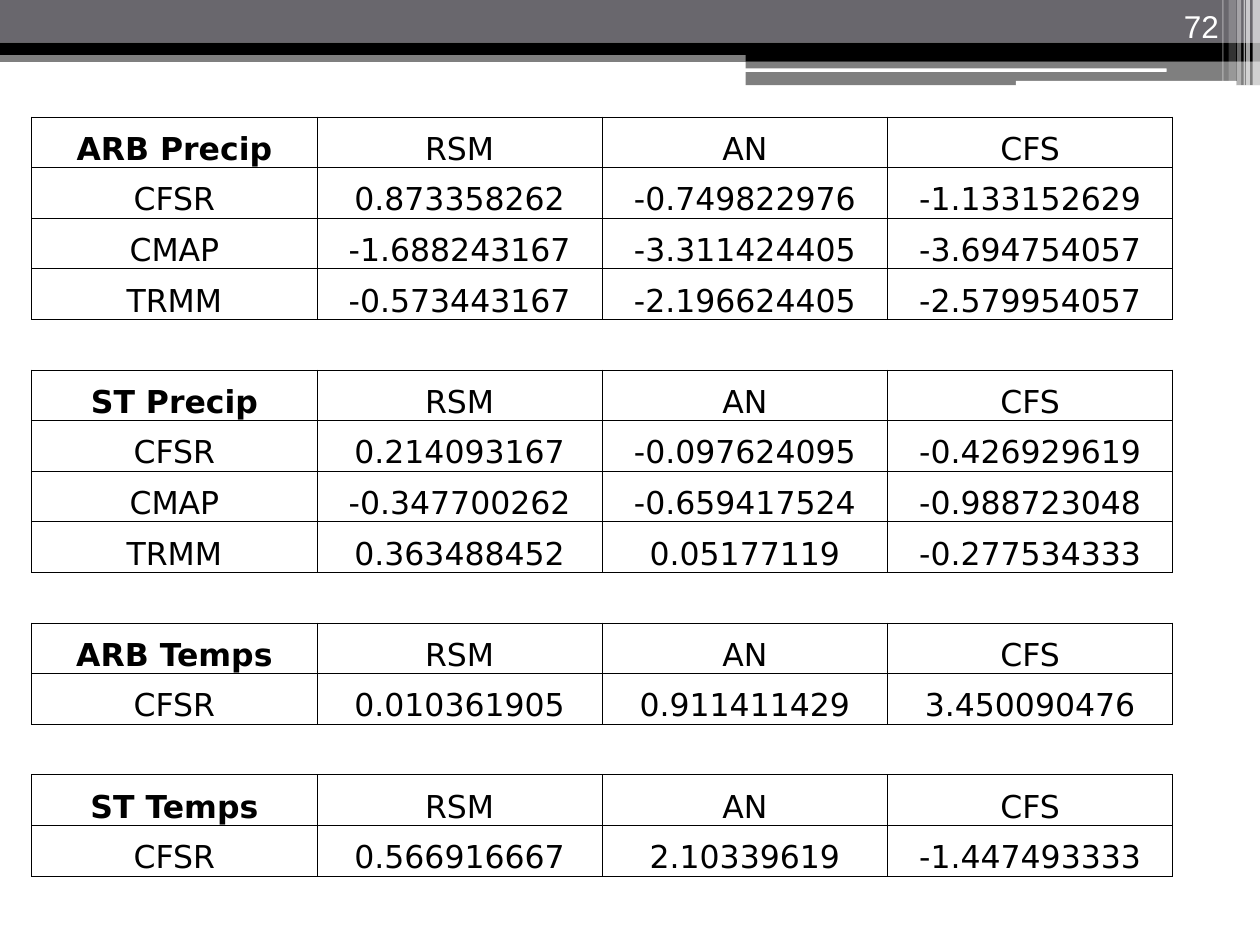
from lxml import etree
from pptx import Presentation
from pptx.dml.color import RGBColor
from pptx.enum import shapes, text
from pptx.oxml import ns
from pptx.util import Cm, Pt

BLACK = RGBColor(0x00, 0x00, 0x00)
WHITE = RGBColor(0xFF, 0xFF, 0xFF)
SLATE = RGBColor(0x69, 0x67, 0x6D)

RECT = shapes.MSO_SHAPE.RECTANGLE
ROUNDED = shapes.MSO_SHAPE.ROUNDED_RECTANGLE

# kind, left, top, width, height (cm), colour, opacity (%)
HEADER_BANDS = [
    (RECT, 0, 1.02, 25.4, 0.23, BLACK, 50),
    (RECT, 0, 0, 25.4, 0.86, SLATE, 100),
    (RECT, 0, 0.86, 25.4, 0.25, BLACK, 100),
    (RECT, 15.03, 0.99, 10.37, 0.25, BLACK, 100),
    (RECT, 15.03, 1.24, 10.37, 0.48, BLACK, 50),
    (ROUNDED, 15.01, 1.38, 8.51, 0.07, WHITE, 100),
    (ROUNDED, 20.48, 1.63, 4.45, 0.1, WHITE, 100),
]
# left, width, height (cm), opacity (%)
EDGE_STRIPES = [
    (25.25, 0.15, 1.73, 65),
    (25.12, 0.08, 1.73, 65),
    (25.07, 0.03, 1.73, 60),
    (24.94, 0.08, 1.73, 40),
    (24.77, 0.15, 1.63, 20),
    (24.64, 0.03, 1.63, 30),
]

MODELS = ["RSM", "AN", "CFS"]
BIAS_BLOCKS = [
    ("ARB Precip", [
        ("CFSR", "0.873358262", "-0.749822976", "-1.133152629"),
        ("CMAP", "-1.688243167", "-3.311424405", "-3.694754057"),
        ("TRMM", "-0.573443167", "-2.196624405", "-2.579954057"),
    ]),
    ("ST Precip", [
        ("CFSR", "0.214093167", "-0.097624095", "-0.426929619"),
        ("CMAP", "-0.347700262", "-0.659417524", "-0.988723048"),
        ("TRMM", "0.363488452", "0.05177119", "-0.277534333"),
    ]),
    ("ARB Temps", [("CFSR", "0.010361905", "0.911411429", "3.450090476")]),
    ("ST Temps", [("CFSR", "0.566916667", "2.10339619", "-1.447493333")]),
]
COLUMN_WIDTH = Cm(5.75)
ROW_HEIGHT = Cm(1.02)


def add_band(page, kind, left, top, width, height, color, opacity):
    band = page.shapes.add_shape(kind, Cm(left), Cm(top), Cm(width), Cm(height))
    band.shadow.inherit = False
    band.line.fill.background()
    band.fill.solid()
    band.fill.fore_color.rgb = color
    if opacity < 100:
        tint = band.fill._xPr.find(".//" + ns.qn("a:srgbClr"))
        etree.SubElement(tint, ns.qn("a:alpha"), val=str(opacity * 1000))


def add_span(para, words, font, color, bold=False):
    span = para.add_run()
    span.text = words
    span.font.name = font
    span.font.size = Pt(18)
    span.font.bold = bold
    span.font.color.rgb = color


def set_borders(cell, visible_sides):
    properties = cell._tc.get_or_add_tcPr()
    for side in "LRTB":
        line = etree.SubElement(properties, ns.qn("a:ln" + side), w=str(Pt(0.5)))
        if side in visible_sides:
            fill = etree.SubElement(line, ns.qn("a:solidFill"))
            etree.SubElement(fill, ns.qn("a:srgbClr"), val=str(BLACK))
        else:
            etree.SubElement(line, ns.qn("a:noFill"))


def format_cell(cell, words, bold):
    """Fill one cell; an empty one keeps only its top and bottom borders."""
    set_borders(cell, "LRTB" if words else "TB")
    cell.fill.background()
    cell.vertical_anchor = text.MSO_ANCHOR.BOTTOM
    cell.margin_left = cell.margin_right = cell.margin_top = Cm(0.03)
    cell.margin_bottom = 0
    para = cell.text_frame.paragraphs[0]
    para.alignment = text.PP_ALIGN.CENTER
    if words:
        add_span(para, words, "DejaVu Sans", BLACK, bold)


def bias_rows():
    """List the rows of all blocks, with an empty row between blocks."""
    rows = []
    for heading, values in BIAS_BLOCKS:
        if rows:
            rows.append([""] * (len(MODELS) + 1))
        rows += [[heading, *MODELS], *values]
    return rows


def add_bias_table(page):
    rows = bias_rows()
    headings = [heading for heading, _ in BIAS_BLOCKS]
    columns = len(MODELS) + 1
    table = page.shapes.add_table(
        len(rows), columns, Cm(0.64), Cm(2.36),
        COLUMN_WIDTH * columns, ROW_HEIGHT * len(rows)).table
    table.first_row = table.horz_banding = False
    for column in table.columns:
        column.width = COLUMN_WIDTH
    for row, values in zip(table.rows, rows):
        row.height = ROW_HEIGHT
        for cell, words in zip(row.cells, values):
            format_cell(cell, words, words in headings)


def add_page_number(page, number):
    box = page.shapes.add_textbox(Cm(22.71), Cm(0), Cm(2.11), Cm(1.02))
    frame = box.text_frame
    frame.word_wrap = True
    frame.vertical_anchor = text.MSO_ANCHOR.BOTTOM
    para = frame.paragraphs[0]
    para.alignment = text.PP_ALIGN.RIGHT
    add_span(para, number, "Arial", WHITE)


def main():
    deck = Presentation()
    deck.slide_width, deck.slide_height = Cm(25.4), Cm(19.05)
    page = deck.slides.add_slide(deck.slide_layouts.get_by_name("Blank"))
    for band in HEADER_BANDS:
        add_band(page, *band)
    for left, width, height, opacity in EDGE_STRIPES:
        add_band(page, RECT, left, 0, width, height, WHITE, opacity)
    add_bias_table(page)
    add_page_number(page, "72")
    deck.save("out.pptx")


if __name__ == "__main__":
    main()
